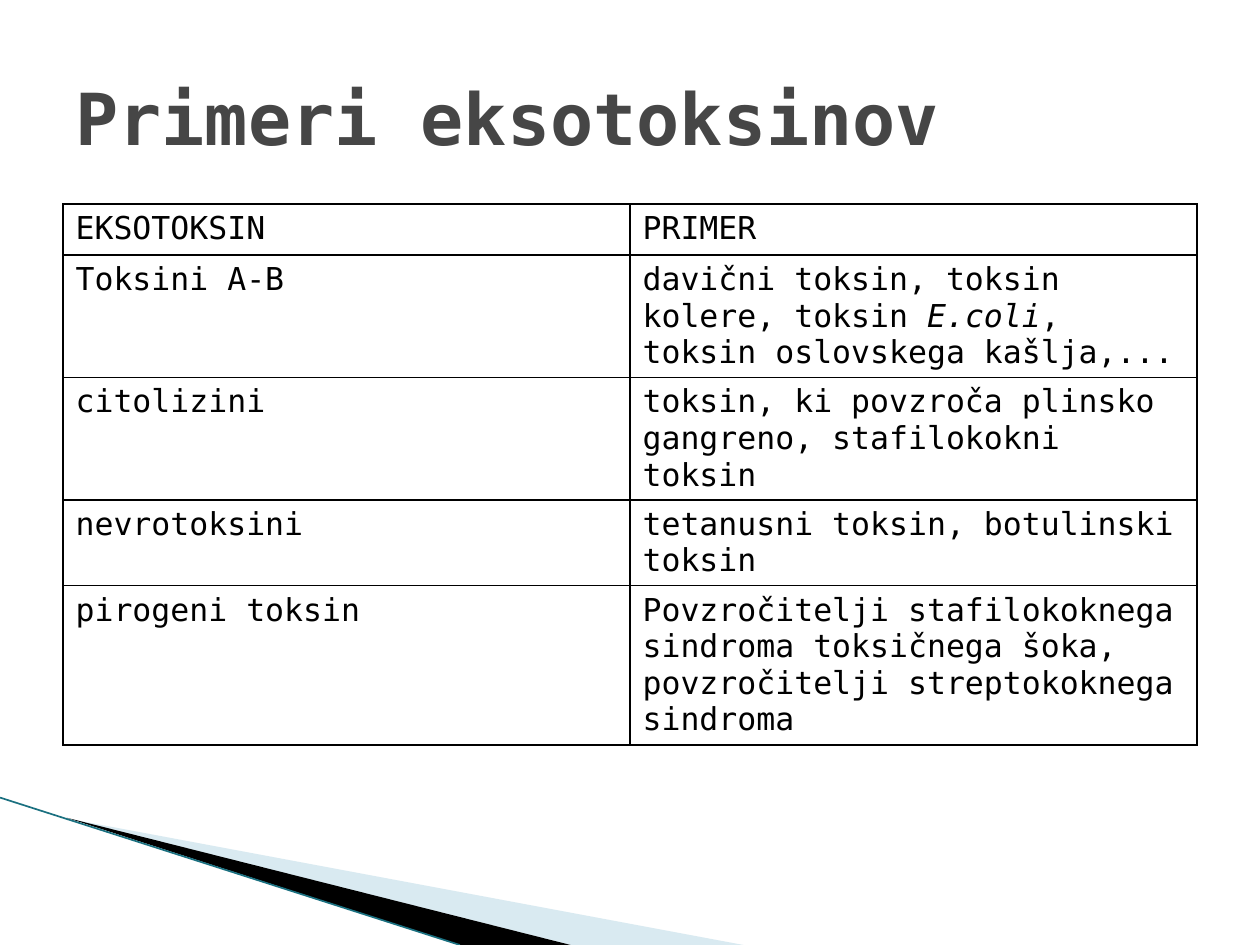
from dataclasses import dataclass

from lxml.etree import SubElement
from pptx import Presentation
from pptx.dml.color import RGBColor
from pptx.enum.shapes import MSO_CONNECTOR
from pptx.enum.text import MSO_ANCHOR
from pptx.oxml.ns import qn
from pptx.util import Inches, Pt


@dataclass(frozen=True)
class Theme:
    font: str = "DejaVu Sans Mono"
    title_size: float = 41
    body_size: float = 18
    title: str = "464646"
    ink: str = "000000"
    wedge: str = "A0CBDC"
    edge: str = "1A7080"


class Deck:
    """Holds the theme and current slide; lengths are in half-inch grid cells."""

    def __init__(self, prs, theme):
        self.theme = theme
        self.s = prs.slides.add_slide(prs.slide_layouts[6])

    @staticmethod
    def cells(*counts):
        return [Inches(n / 2) for n in counts]

    def style(self, p, size, color, bold=False):
        for r in p.runs:
            r.font.name = self.theme.font
            r.font.size = Pt(size)
            r.font.bold = bold
            r.font.color.rgb = RGBColor.from_string(color)

    def wedge(self, points, color, opacity=100):
        start, *rest = [self.cells(*pt) for pt in points]
        builder = self.s.shapes.build_freeform(*start)
        builder.add_line_segments(rest)
        sp = builder.convert_to_shape()
        sp.shadow.inherit = False
        sp.fill.solid()
        sp.fill.fore_color.rgb = RGBColor.from_string(color)
        sp.line.fill.background()
        if opacity < 100:
            rgb = sp.fill._xPr.find(".//" + qn("a:srgbClr"))
            SubElement(rgb, qn("a:alpha"), val=str(opacity * 1000))

    def line(self, start, end, color, width):
        c = self.s.shapes.add_connector(
            MSO_CONNECTOR.STRAIGHT, *self.cells(*start, *end))
        c.line.color.rgb = RGBColor.from_string(color)
        c.line.width = Pt(width)
        SubElement(c._element.spPr, qn("a:effectLst"))

    def title(self, text, box):
        tf = self.s.shapes.add_textbox(*self.cells(*box)).text_frame
        tf.word_wrap = True
        tf.vertical_anchor = MSO_ANCHOR.MIDDLE
        tf.text = text
        self.style(tf.paragraphs[0], self.theme.title_size, self.theme.title, True)

    def border(self, cell):
        tc_pr = cell._tc.get_or_add_tcPr()
        for i, side in enumerate(("lnL", "lnR", "lnT", "lnB")):
            ln = SubElement(tc_pr, qn("a:" + side), w=str(Pt(1)))
            fill = SubElement(ln, qn("a:solidFill"))
            SubElement(fill, qn("a:srgbClr"), val=self.theme.ink)
            tc_pr.insert(i, ln)

    def table(self, rows, box, heights):
        """Fill a table; a cell given as a tuple has every second run in italics."""
        table = self.s.shapes.add_table(
            len(rows), len(rows[0]), *self.cells(*box)).table
        table.first_row = table.horz_banding = False
        for row, height, texts in zip(table.rows, self.cells(*heights), rows):
            row.height = height
            for cell, text in zip(row.cells, texts):
                cell.fill.background()
                self.border(cell)
                p = cell.text_frame.paragraphs[0]
                parts = text if isinstance(text, tuple) else (text,)
                for i, part in enumerate(parts):
                    r = p.add_run()
                    r.text = part
                    r.font.italic = i % 2 == 1
                self.style(p, self.theme.body_size, self.theme.ink)


TOXINS = [
    ("EKSOTOKSIN", "PRIMER"),
    ("Toksini A-B", ("davični toksin, toksin kolere, toksin ", "E.coli",
                     ", toksin oslovskega kašlja,...")),
    ("citolizini", "toksin, ki povzroča plinsko gangreno, stafilokokni toksin"),
    ("nevrotoksini", "tetanusni toksin, botulinski toksin"),
    ("pirogeni toksin", "Povzročitelji stafilokoknega sindroma toksičnega šoka, "
                        "povzročitelji streptokoknega sindroma"),
]


def main():
    prs = Presentation()
    prs.slide_width, prs.slide_height = Inches(10), Inches(7.5)
    theme = Theme()
    deck = Deck(prs, theme)
    deck.wedge([(1.1, 13), (11.8, 15), (9.06, 15)], theme.wedge, opacity=40)
    deck.wedge([(1.06, 12.98), (9.06, 15), (7.3, 15)], theme.ink)
    deck.line((0, 12.66), (7.3, 15), theme.edge, 0.95)
    deck.table(TOXINS, (1, 3.24, 18, 8.58), (0.81, 1.94, 1.94, 1.36, 2.53))
    deck.title("Primeri eksotoksinov", (1, 0.6, 18, 2.5))
    prs.save("out.pptx")


if __name__ == "__main__":
    main()
